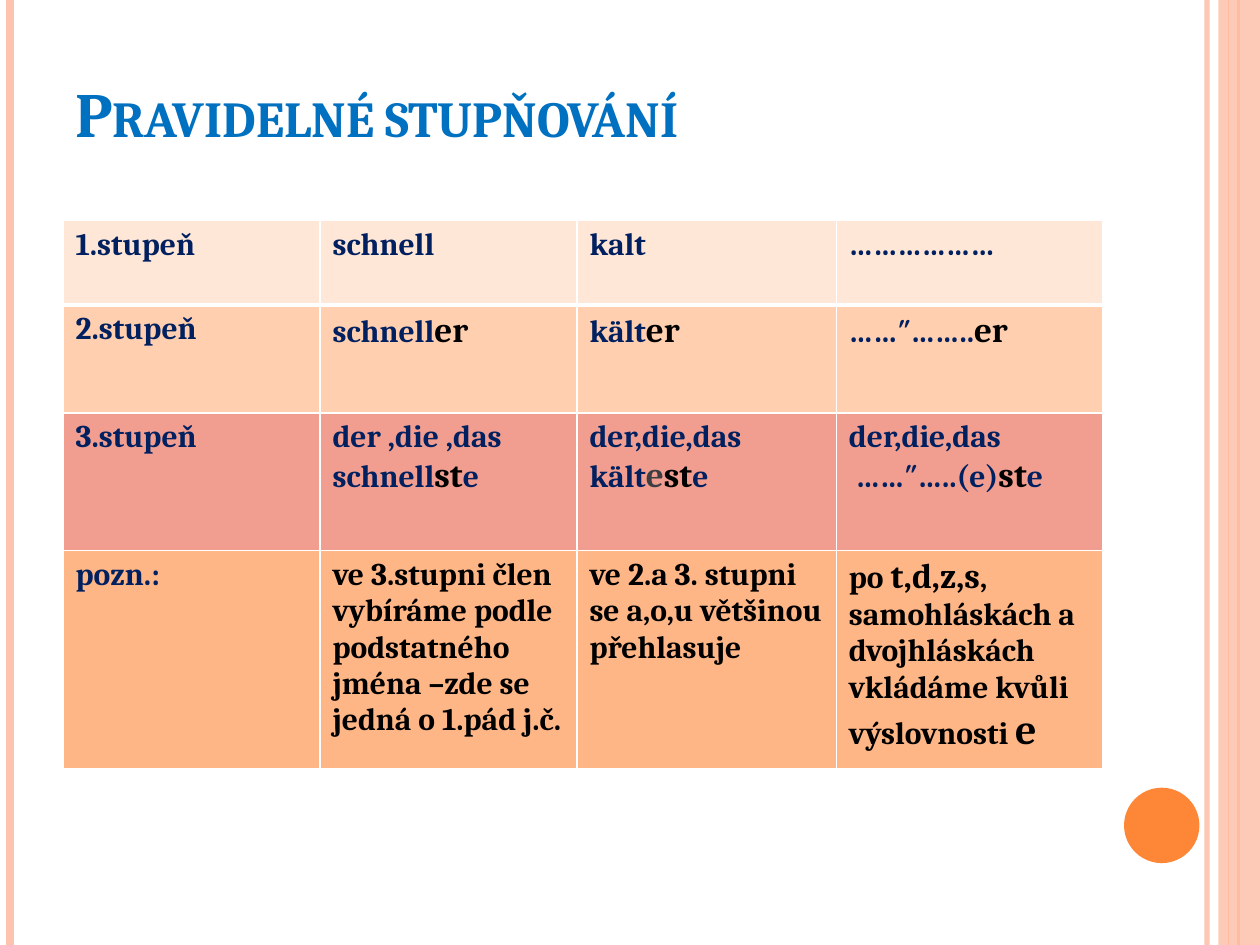
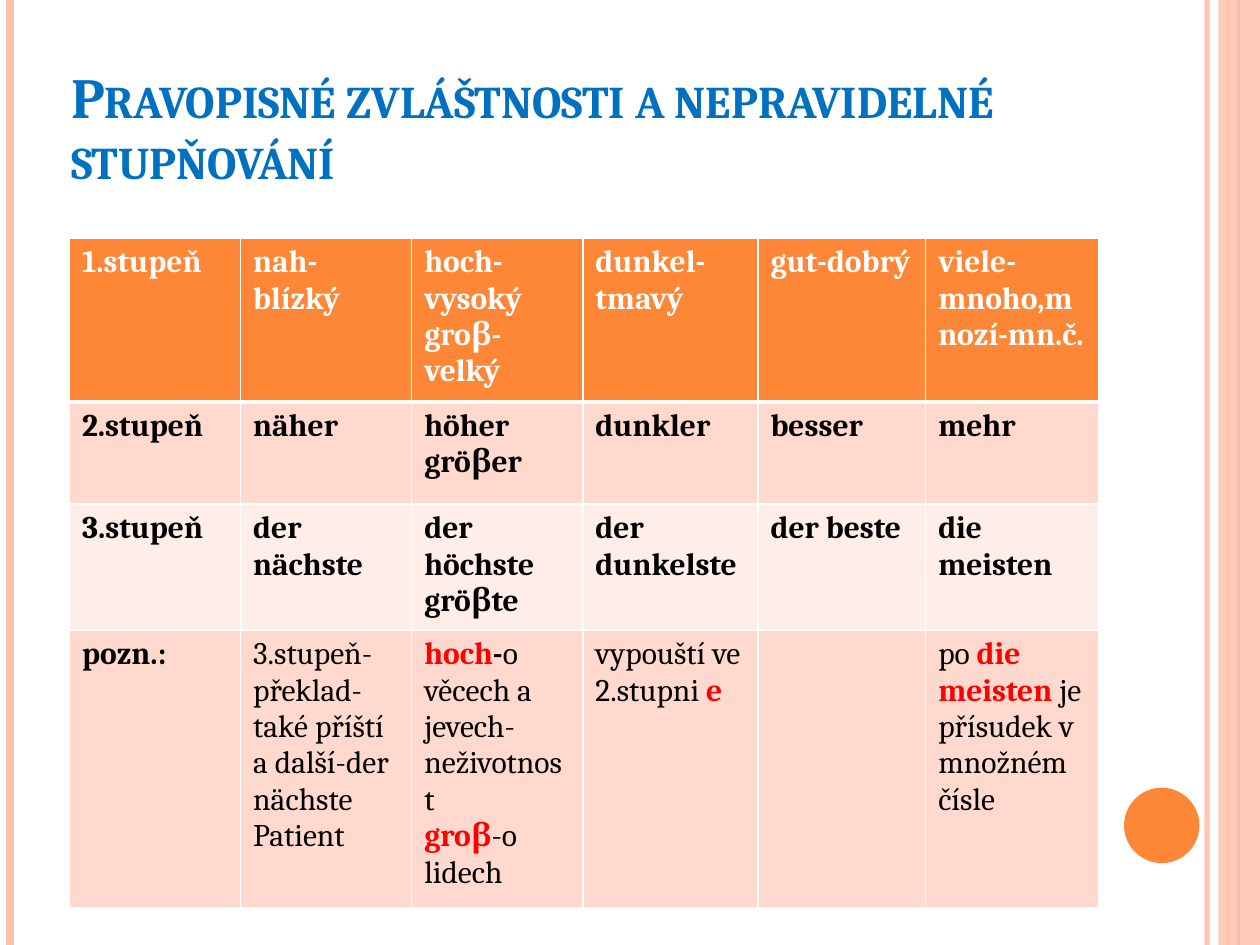
from collections import namedtuple

from lxml import etree
from pptx import Presentation
from pptx.dml.color import RGBColor
from pptx.enum.shapes import MSO_CONNECTOR, MSO_SHAPE
from pptx.enum.text import MSO_ANCHOR
from pptx.oxml.ns import qn
from pptx.util import Cm, Pt

LINE = MSO_CONNECTOR.STRAIGHT
RECT = MSO_SHAPE.RECTANGLE
OVAL = MSO_SHAPE.OVAL
BOTTOM = MSO_ANCHOR.BOTTOM

FONT = "Cambria"
WIDE, HIGH = 25.4, 19.05
BLACK = RGBColor(0x00, 0x00, 0x00)
WHITE = RGBColor(0xFF, 0xFF, 0xFF)
RED = RGBColor(0xFF, 0x00, 0x00)
NAVY = RGBColor(0x00, 0x20, 0x60)
BLUE = RGBColor(0x00, 0x70, 0xC0)
GRAY = RGBColor(0x3C, 0x3E, 0x42)
ORANGE = RGBColor(0xFE, 0x86, 0x37)
PEACH = RGBColor(0xFE, 0xC3, 0xAE)
CREAM = RGBColor(0xFF, 0xE7, 0xD7)
SAND = RGBColor(0xFF, 0xCF, 0xAF)
CORAL = RGBColor(0xF1, 0x9E, 0x91)
AMBER = RGBColor(0xFE, 0xB6, 0x87)
ROSE = RGBColor(0xFF, 0xD9, 0xCE)
BLUSH = RGBColor(0xFF, 0xED, 0xE8)

Box = namedtuple("Box", "left top width height")
Style = namedtuple("Style", "color size bold", defaults=(18, True))

# Text styles
BASE = Style(NAVY)
HEAD = Style(WHITE)
BOLD = Style(BLACK)
PLAIN = Style(BLACK, bold=False)
MARK = Style(RED)
END = Style(BLACK, 20)
SOFT = Style(GRAY, 20)
LARGE = Style(BLACK, 24)

# Side bands: x, line width, colour, opacity in percent
BANDS = [(24.33, 3, PEACH, 93), (0.2, 4.5, PEACH, 100),
         (24.97, 1.5, ORANGE, 100), (24.77, 0.75, ORANGE, 100)]


def fade(shape, share):
    """Set the opacity of the shape's only colour."""
    color = next(shape._element.iter(qn("a:srgbClr")))
    etree.SubElement(color, qn("a:alpha"), val=str(share * 1000))


def add_run(para, text, style):
    run = para.add_run()
    run.text = text
    font = run.font
    font.name, font.size, font.bold = FONT, Pt(style.size), style.bold
    font.color.rgb = style.color
    return run


def add_text(para, parts):
    """Add (text, style) parts; a newline in a text is a line break."""
    for text, style in parts:
        for i, piece in enumerate(text.split("\n")):
            if i:
                para.add_line_break()
            if piece:
                add_run(para, piece, style)


def add_solid(slide, kind, box, color):
    shape = slide.shapes.add_shape(kind, *map(Cm, box))
    shape.shadow.inherit = False
    shape.fill.solid()
    shape.fill.fore_color.rgb = color
    shape.line.fill.background()
    return shape


def add_frame(slide, box):
    """Side bands and the round badge."""
    for x, width, color, share in BANDS:
        left = Cm(box.left + x)
        line = slide.shapes.add_connector(
            LINE, left, Cm(box.top), left, Cm(box.top + box.height))
        line.line.color.rgb = color
        line.line.width = Pt(width)
        etree.SubElement(line._element.spPr, qn("a:effectLst"))
        if share < 100:
            fade(line, share)
    right = box.left + box.width
    strip = Box(right - 0.84, box.top, 0.84, box.height)
    fade(add_solid(slide, RECT, strip, PEACH), 87)
    badge = Box(right - 2.74, box.top + 15.88, 1.52, 1.52)
    add_solid(slide, OVAL, badge, ORANGE)


def add_title(slide, box, text, size):
    frame = slide.shapes.add_textbox(*map(Cm, box)).text_frame
    frame.word_wrap = True
    frame.vertical_anchor = BOTTOM
    para = frame.paragraphs[0]
    para.line_spacing = 0.9
    run = add_run(para, text, Style(BLUE, size))
    run._r.get_or_add_rPr().set("cap", "small")


def add_edges(cell, top, bottom):
    """White borders, set before the fill as the schema asks."""
    props = cell._tc.get_or_add_tcPr()
    for side, width in (("L", 1), ("R", 1), ("T", top), ("B", bottom)):
        edge = etree.SubElement(props, qn("a:ln" + side), w=str(Pt(width)))
        fill = etree.SubElement(edge, qn("a:solidFill"))
        etree.SubElement(fill, qn("a:srgbClr"), val=str(WHITE))


def add_grid(slide, left, top, cols, rows, fills, styles, data):
    """Table whose rows each have a fill and a default text style."""
    box = Box(left, top, sum(cols), sum(rows))
    table = slide.shapes.add_table(
        len(rows), len(cols), *map(Cm, box)).table
    for col, width in zip(table.columns, cols):
        col.width = Cm(width)
    for r, (row, height) in enumerate(zip(table.rows, rows)):
        row.height = Cm(height)
        for cell, parts in zip(row.cells, data[r]):
            add_edges(cell, 3 if r == 1 else 1, 3 if r == 0 else 1)
            cell.fill.solid()
            cell.fill.fore_color.rgb = fills[r]
            if isinstance(parts, str):
                parts = [(parts, styles[r])]
            add_text(cell.text_frame.paragraphs[0], parts)


REGULAR = [
    ["1.stupeň", "schnell", "kalt", "………………"],
    ["2.stupeň"] + [[(stem, BASE), ("er", END)]
                    for stem in ("schnell", "kält", "……″……..")],
    ["3.stupeň",
     [("der ,die ,das schnell", BASE), ("st", END), ("e", BASE)],
     [("der,die,das kält", BASE), ("e", SOFT), ("st", END), ("e", BASE)],
     [("der,die,das\n ……″…..(e)", BASE), ("st", END), ("e", BASE)]],
    [[("pozn.:", BASE)],
     "ve 3.stupni člen vybíráme podle podstatného jména "
     "–zde se jedná o 1.pád j.č.",
     "ve 2.a 3. stupni se a,o,u většinou přehlasuje",
     [("po ", BOLD), ("t,d,z,s", END),
      (", samohláskách a dvojhláskách vkládáme kvůli výslovnosti ", BOLD),
      ("e", LARGE)]],
]

SPECIAL = [
    ["1.stupeň", "nah-blízký", "hoch-vysoký\ngroβ-velký",
     "dunkel-tmavý", "gut-dobrý", "viele-mnoho,mnozí-mn.č."],
    ["2.stupeň", "näher", "höher\ngröβer", "dunkler", "besser", "mehr"],
    ["3.stupeň", "der nächste", "der höchste\ngröβte", "der dunkelste",
     "der beste", "die meisten"],
    [[("pozn.:", BOLD)],
     "3.stupeň-překlad-také příští a další-der nächste Patient",
     [("hoch", MARK), ("-", BOLD),
      ("o věcech a jevech-neživotnost\n", PLAIN),
      ("groβ", MARK), ("-o lidech", PLAIN)],
     [("vypouští ve 2.stupni ", PLAIN), ("e", MARK)],
     [],
     [("po ", PLAIN), ("die meisten ", MARK),
      ("je přísudek v množném čísle", PLAIN)]],
]


def add_page(deck):
    slide = deck.slides.add_slide(deck.slide_layouts[6])
    add_frame(slide, Box(0, 0, WIDE, HIGH))
    return slide


def main():
    deck = Presentation()
    deck.slide_width, deck.slide_height = Cm(WIDE), Cm(HIGH)

    # Regular comparison
    slide = add_page(deck)
    add_title(slide, Box(1.27, 0.76, 20.55, 2.41),
              "Pravidelné stupňování", 36)
    add_grid(slide, 1.27, 4.45, [5.18, 5.18, 5.23, 5.36],
             [1.7, 2.18, 2.77, 4.24], [CREAM, SAND, CORAL, AMBER],
             [BASE, BASE, BASE, BOLD], REGULAR)

    # Spelling and irregular forms
    slide = add_page(deck)
    add_title(slide, Box(1.19, 0.79, 20.96, 3.2),
              "Pravopisné zvláštnosti a nepravidelné stupňování", 32.4)
    add_grid(slide, 1.4, 4.8, [3.45, 3.45, 3.45, 3.53, 3.38, 3.48],
             [3.17, 2.06, 2.46, 5.36], [ORANGE, ROSE, BLUSH, ROSE],
             [HEAD, BOLD, BOLD, PLAIN], SPECIAL)

    deck.save("out.pptx")


if __name__ == "__main__":
    main()
